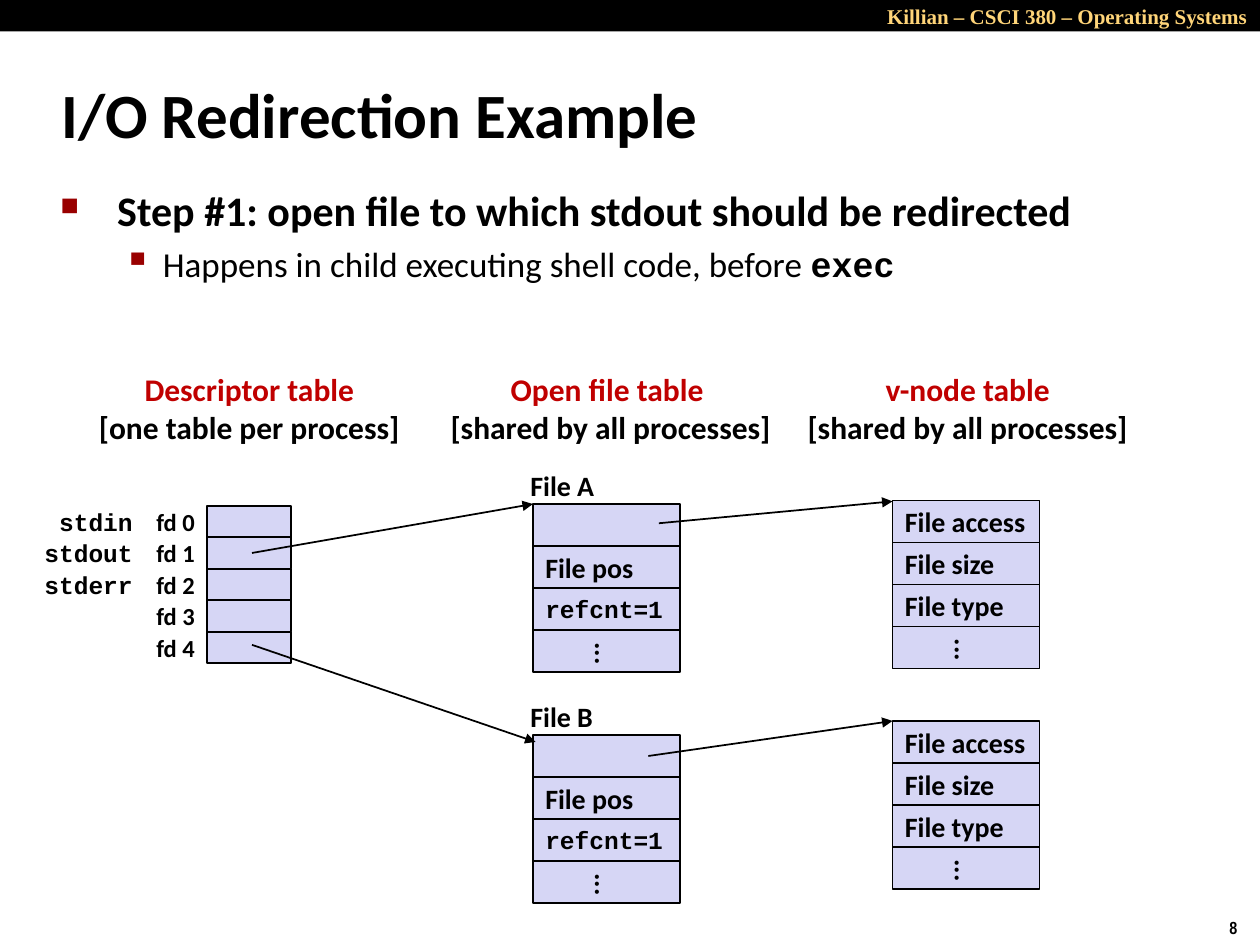
from pptx import Presentation
from pptx.dml.color import RGBColor as Rgb
from pptx.enum.shapes import MSO_CONNECTOR as Conn, MSO_SHAPE as Geo
from pptx.enum.text import MSO_ANCHOR as Anchor, PP_ALIGN as Align
from pptx.oxml.ns import qn
from pptx.util import Pt
from lxml.etree import SubElement as Sub

BODY, CODE = "Calibri", "Courier New"
BLACK, RED, FILL = "000000", "C00000", "D6D6F5"
CELL_W, CELL_H = 84, 24
FD_W, FD_H = 48, 18


def tint(code):
    return Rgb.from_string(code)


def put(para, text, size, font=BODY, color=BLACK, bold=True):
    run = para.add_run()
    run.text = text
    run.font.size = Pt(size)
    run.font.name = font
    run.font.bold = bold
    run.font.color.rgb = tint(color)


def label(slide, box, lines, align=Align.LEFT, anchor=Anchor.MIDDLE, wrap=False):
    frame = slide.shapes.add_textbox(*map(Pt, box)).text_frame
    frame.word_wrap = wrap
    frame.vertical_anchor = anchor
    for i, line in enumerate(lines):
        para = frame.add_paragraph() if i else frame.paragraphs[0]
        para.alignment = align
        put(para, *line)
    return frame


def block(slide, box, fill=FILL, edge=BLACK):
    shape = slide.shapes.add_shape(Geo.RECTANGLE, *map(Pt, box))
    shape.shadow.inherit = False
    shape.fill.solid()
    shape.fill.fore_color.rgb = tint(fill)
    if edge:
        shape.line.color.rgb = tint(edge)
        shape.line.width = Pt(1)
    else:
        shape.line.fill.background()
    return shape


def arrow(slide, *ends):
    line = slide.shapes.add_connector(Conn.STRAIGHT, *map(Pt, ends))
    line.line.color.rgb = tint(BLACK)
    line.line.width = Pt(1)
    props = line._element.spPr
    Sub(props.find(qn("a:ln")), qn("a:tailEnd"), type="triangle")
    Sub(props, qn("a:effectLst"))


def bullet(para, mark, left, hang, size, gap):
    para.space_before = Pt(gap)
    props = para._p.get_or_add_pPr()
    props.set("marL", str(Pt(left)))
    props.set("indent", str(-Pt(hang)))
    color = Sub(props, qn("a:buClr"))
    Sub(color, qn("a:srgbClr"), val="990000")
    Sub(props, qn("a:buSzPct"), val=str(size * 1000))
    Sub(props, qn("a:buChar"), char=mark)


def banner(slide, box):
    left, top, wide, high = box
    block(slide, box, BLACK, None)
    line = "Killian – CSCI 380 – Operating Systems", 12, "Times New Roman", "FFD579"
    label(slide, (left + wide - 246, top - 2, 246, high + 4), [line],
          Align.RIGHT, wrap=True)


def body(slide, box):
    frame = label(slide, box, [
        (" Step #1: open file to which stdout should be redirected", 24),
        ("Happens in child executing shell code, before ", 20, BODY, BLACK, False),
    ], anchor=Anchor.TOP, wrap=True)
    step, note = frame.paragraphs
    note.level = 1
    put(note, "exec", 20, CODE)
    bullet(step, "■", 27, 27, 60, 4.8)
    bullet(note, "▪", 58.5, 22.5, 110, 4)


def heads(slide, top):
    for left, wide, name, scope in (
        (48.5, 188, "Descriptor table", "[one table per process]"),
        (249, 200, "Open file table ", "[shared by all processes]"),
        (453, 200, "v-node table", "[shared by all processes]"),
    ):
        label(slide, (left, top, wide, 51),
              [(name, 18, BODY, RED), (scope, 18)], Align.CENTER)


def fds(slide, left, top):
    for i in range(5):
        y = top + i * FD_H
        block(slide, (left, y, FD_W, FD_H))
        label(slide, (left - FD_W, y, FD_W, FD_H), [(f"fd {i}", 14)], Align.RIGHT)
    for i, name in enumerate(("stdin", "stdout", "stderr")):
        label(slide, (18, top + i * FD_H - 3, 65, 24), [(name, 14, CODE)],
              Align.RIGHT)


def stack(slide, left, top, rows):
    for i, row in enumerate(rows):
        shape = block(slide, (left, top + i * CELL_H, CELL_W, CELL_H))
        if not row:
            continue
        frame = shape.text_frame
        frame.word_wrap = False
        frame.vertical_anchor = Anchor.MIDDLE
        frame.paragraphs[0].alignment = Align.LEFT
        put(frame.paragraphs[0], *row)
        if row[0] == "...":
            frame._txBody.bodyPr.set("vert", "eaVert")


def entry(slide, name, left, top):
    label(slide, (left - 8.5, top - 24, 51, 27), [(name, 16)])
    stack(slide, left, top, [
        None, ("File pos", 16), ("refcnt=1", 14, CODE), ("...", 16)])


def vnode(slide, left, top):
    names = "File access", "File size", "File type", "..."
    stack(slide, left, top, [(name, 16) for name in names])


def main():
    deck = Presentation()
    deck.slide_width, deck.slide_height = Pt(720), Pt(540)
    slide = deck.slides.add_slide(deck.slide_layouts[6])
    banner(slide, (0, 0, 720, 18))
    label(slide, (695.5, 520.5, 24.5, 19.5), [("8", 10, "Arial Narrow")])
    label(slide, (28, 34.5, 598, 60), [("I/O Redirection Example", 36)], wrap=True)
    body(slide, (27.5, 102, 673, 78))
    heads(slide, 207.5)
    fds(slide, 118.5, 289)
    for name, top, peer in (("File A", 288, 286), ("File B", 420, 412)):
        entry(slide, name, 304.5, top)
        vnode(slide, 510, peer)
    arrow(slide, 144, 316, 304.5, 288)
    arrow(slide, 144, 368.5, 306, 424)
    arrow(slide, 376.5, 299, 510, 286.5)
    arrow(slide, 370.5, 432, 510, 412)
    deck.save("out.pptx")


if __name__ == "__main__":
    main()
